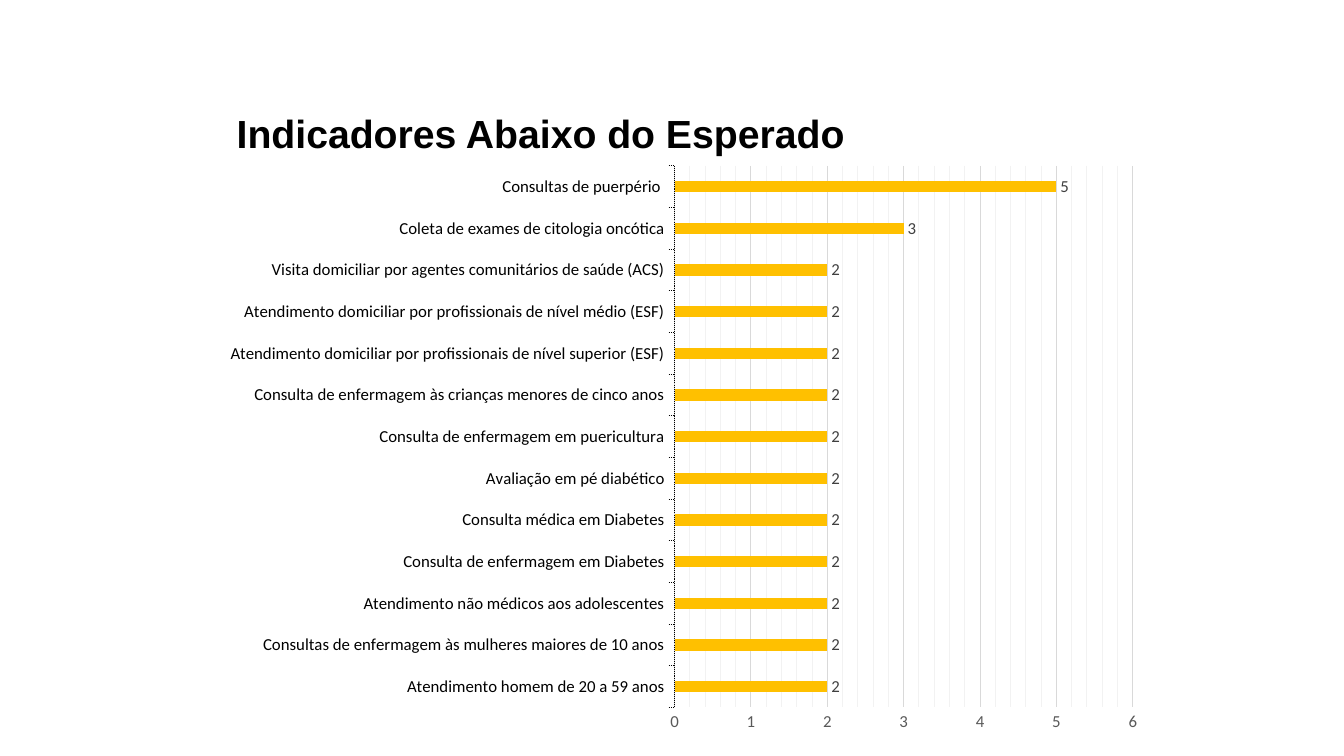
from copy import deepcopy

from lxml import etree
from pptx import Presentation
from pptx.chart.data import CategoryChartData as Data
from pptx.dml.color import RGBColor as Rgb
from pptx.enum.chart import XL_CHART_TYPE as Kind
from pptx.enum.chart import XL_LABEL_POSITION as Spot
from pptx.enum.chart import XL_TICK_MARK as Tick
from pptx.enum.dml import MSO_LINE as Dash
from pptx.oxml.ns import qn
from pptx.util import Inches, Pt

# Content, from the bottom bar to the top one
TITLE = "Indicadores Abaixo do Esperado"
ITEMS = [
    ("Atendimento homem de 20 a 59 anos", 2),
    ("Consultas de enfermagem às mulheres maiores de 10 anos", 2),
    ("Atendimento não médicos aos adolescentes", 2),
    ("Consulta de enfermagem em Diabetes", 2),
    ("Consulta médica em Diabetes", 2),
    ("Avaliação em pé diabético", 2),
    ("Consulta de enfermagem em puericultura", 2),
    ("Consulta de enfermagem às crianças menores de cinco anos", 2),
    ("Atendimento domiciliar por profissionais de nível superior (ESF)", 2),
    ("Atendimento domiciliar por profissionais de nível médio (ESF)", 2),
    ("Visita domiciliar por agentes comunitários de saúde (ACS)", 2),
    ("Coleta de exames de citologia oncótica", 3),
    ("Consultas de puerpério ", 5),
]
COLORS = {"text": "000000", "bar": "FFC000", "value": "404040",
          "scale": "595959", "major": "D9D9D9", "minor": "F2F2F2"}
# Share of the chart taken by the bars' area
INNER = {"x": 0.49, "y": 0.02, "w": 0.485, "h": 0.92}


def rgb(name):
    return Rgb.from_string(COLORS[name])


def style(font, size=12, color="text", face="Calibri", bold=False):
    font.size, font.name, font.bold = Pt(size), face, bold
    font.color.rgb = rgb(color)


def stroke(line, color):
    line.color.rgb = rgb(color)
    line.width = Pt(0.75)


def add_text(slide, text, box, **look):
    frame = slide.shapes.add_textbox(*map(Inches, box)).text_frame
    frame.word_wrap = False
    run = frame.paragraphs[0].add_run()
    run.text = text
    style(run.font, **look)


def place(chart):
    """Fix the area inside the axes."""
    area = chart.plots[0]._element.getparent()
    for old in area.findall(qn("c:layout")):
        area.remove(old)
    layout = etree.Element(qn("c:layout"))
    area.insert(0, layout)
    manual = etree.SubElement(layout, qn("c:manualLayout"))
    parts = {"layoutTarget": "inner", "xMode": "edge", "yMode": "edge", **INNER}
    for tag, val in parts.items():
        etree.SubElement(manual, qn("c:" + tag)).set("val", str(val))


def add_grid(axis):
    """Draw both grids; the minor one takes the major's line, recoloured."""
    axis.has_major_gridlines = axis.has_minor_gridlines = True
    stroke(axis.major_gridlines.format.line, "major")
    root = axis._element
    look = deepcopy(root.find(qn("c:majorGridlines")).find(qn("c:spPr")))
    next(look.iter(qn("a:srgbClr"))).set("val", COLORS["minor"])
    root.find(qn("c:minorGridlines")).append(look)


def add_bars(slide, box):
    data = Data()
    data.categories = [name for name, _ in ITEMS]
    data.add_series("Series 1", [val for _, val in ITEMS])
    chart = slide.shapes.add_chart(
        Kind.BAR_CLUSTERED, *map(Inches, box), data).chart
    chart.has_legend = chart.has_title = False
    style(chart.font, size=10)
    place(chart)

    # Bars and their values
    plot = chart.plots[0]
    plot.gap_width, plot.overlap = 269, -48
    plot.vary_by_categories = False
    fill = plot.series[0].format.fill
    fill.solid()
    fill.fore_color.rgb = rgb("bar")
    labels = plot.series[0].data_labels
    labels.show_value = True
    labels.position = Spot.OUTSIDE_END
    style(labels.font, color="value")

    # Category axis
    cats = chart.category_axis
    cats.major_tick_mark, cats.minor_tick_mark = Tick.OUTSIDE, Tick.NONE
    cats.has_major_gridlines = False
    style(cats.tick_labels.font)
    stroke(cats.format.line, "text")
    cats.format.line.dash_style = Dash.ROUND_DOT

    # Value axis
    vals = chart.value_axis
    vals.minimum_scale, vals.maximum_scale = 0, 6
    vals.major_unit, vals.minor_unit = 1, 0.2
    vals.major_tick_mark = vals.minor_tick_mark = Tick.NONE
    add_grid(vals)
    vals.format.line.fill.background()
    style(vals.tick_labels.font, color="scale")


def main():
    deck = Presentation()
    deck.slide_width, deck.slide_height = Inches(13.33), Inches(7.5)
    slide = deck.slides.add_slide(deck.slide_layouts[6])
    add_text(slide, TITLE, (2.25, 1.04, 6.3, 0.57),
             size=28, face="Arial", bold=True)
    add_bars(slide, (2.1, 1.53, 9.37, 5.84))
    deck.save("out.pptx")


if __name__ == "__main__":
    main()
